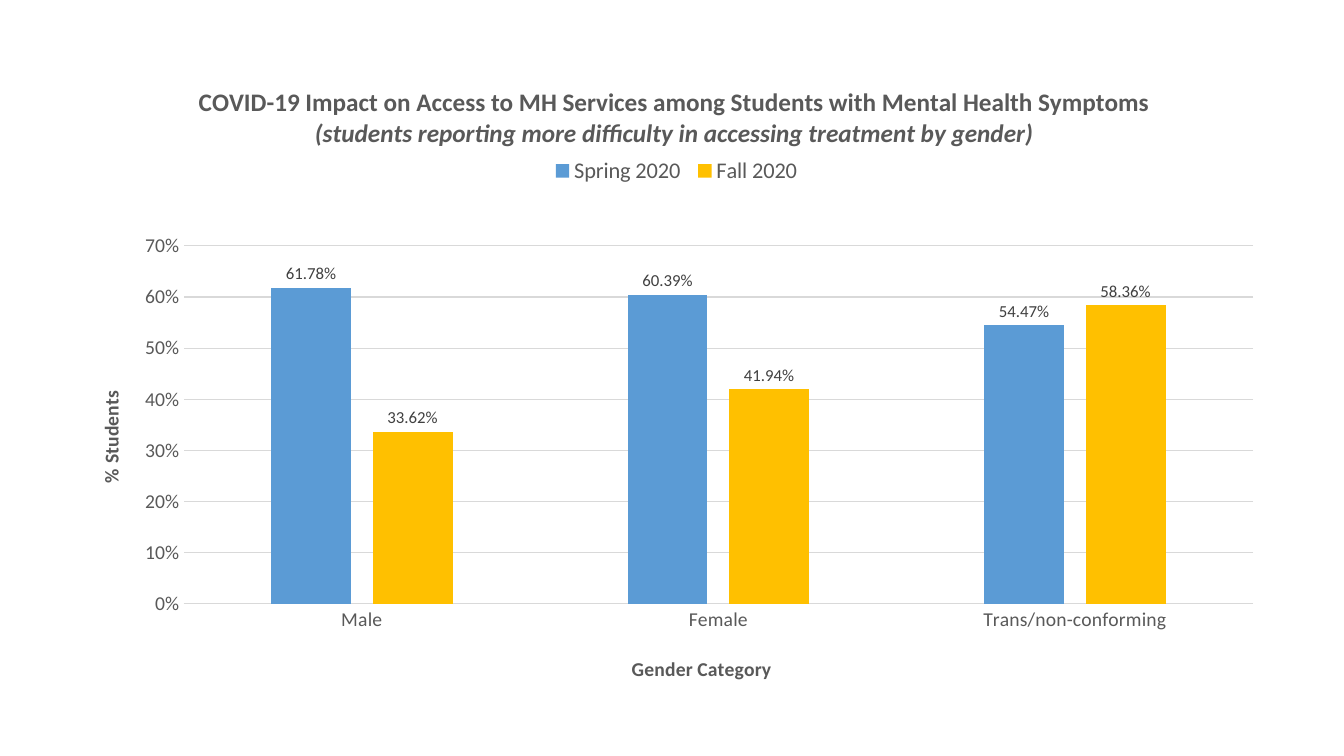
from lxml import etree
from pptx import Presentation
from pptx.chart.data import CategoryChartData
from pptx.dml.color import RGBColor
from pptx.enum.chart import XL_CHART_TYPE, XL_LABEL_POSITION, XL_LEGEND_POSITION, XL_TICK_MARK
from pptx.oxml.ns import qn
from pptx.util import Inches, Pt

COLUMNS = XL_CHART_TYPE.COLUMN_CLUSTERED
OUTSIDE = XL_LABEL_POSITION.OUTSIDE_END
TOP = XL_LEGEND_POSITION.TOP
NO_TICK = XL_TICK_MARK.NONE

GRAY = RGBColor(0x59, 0x59, 0x59)
DARK = RGBColor(0x40, 0x40, 0x40)
LIGHT = RGBColor(0xD9, 0xD9, 0xD9)
BLUE = RGBColor(0x5B, 0x9B, 0xD5)
GOLD = RGBColor(0xFF, 0xC0, 0x00)

TITLE = [
    ("COVID-19 Impact on Access to MH Services among Students with Mental Health Symptoms", False),
    ("(students reporting more difficulty in accessing treatment by gender)", True),
]
GENDERS = ["Male", "Female", "Trans/non-conforming"]
SERIES = [
    ("Spring 2020", [0.6178, 0.6039, 0.5447], BLUE),
    ("Fall 2020", [0.3362, 0.4194, 0.5836], GOLD),
]
X_TITLE, Y_TITLE = "Gender Category", "% Students"

CHART = (0.66, 0.58, 12.01, 6.35)
PLOT_AT = (1.82, 2.44, 10.61, 3.55)
TITLE_AT = (1.94, 0.82)
LEGEND_AT = (5.41, 1.56, 2.6, 0.27)
X_TITLE_AT = (6.23, 6.47)
Y_TITLE_AT = (0.93, 3.84)


def set_font(font, size, color=GRAY, **formats):
    font.name, font.size = "Calibri", Pt(size)
    font.color.rgb = color
    for name, value in formats.items():
        setattr(font, name, value)


def set_text(tf, lines, size):
    for i, (text, italic) in enumerate(lines):
        p = tf.paragraphs[0] if i == 0 else tf.add_paragraph()
        r = p.add_run()
        r.text = text
        set_font(r.font, size, bold=True, italic=italic)


def place(el, box, inner=False):
    for old in el.findall(qn("c:layout")):
        el.remove(old)
    layout = etree.Element(qn("c:layout"))
    manual = etree.SubElement(layout, qn("c:manualLayout"))
    left, top, width, height = CHART
    fractions = [(box[0] - left) / width, (box[1] - top) / height]
    fractions += [n / total for n, total in zip(box[2:], (width, height))]
    settings = [("layoutTarget", "inner")] if inner else []
    settings += [("xMode", "edge"), ("yMode", "edge")]
    settings += [(tag, f"{n:.4f}") for tag, n in zip("xywh", fractions)]
    for tag, value in settings:
        etree.SubElement(manual, qn(f"c:{tag}")).set("val", value)
    overlay = el.find(qn("c:overlay"))
    if overlay is None:
        el.insert(0, layout)
    else:
        overlay.addprevious(layout)


prs = Presentation()
prs.slide_width, prs.slide_height = Inches(13.33), Inches(7.5)
s = prs.slides.add_slide(prs.slide_layouts[6])

data = CategoryChartData(number_format="0.00%")
data.categories = GENDERS
for name, values, _ in SERIES:
    data.add_series(name, values)
chart = s.shapes.add_chart(COLUMNS, *map(Inches, CHART), data).chart
set_font(chart.font, 10, RGBColor(0, 0, 0))

chart.has_title = True
set_text(chart.chart_title.text_frame, TITLE, 18)
place(chart.chart_title._element, TITLE_AT)

chart.has_legend = True
chart.legend.position = TOP
chart.legend.include_in_layout = False
set_font(chart.legend.font, 16)
place(chart.legend._element, LEGEND_AT)

x_axis, y_axis = chart.category_axis, chart.value_axis
for axis, text, box in ((x_axis, X_TITLE, X_TITLE_AT), (y_axis, Y_TITLE, Y_TITLE_AT)):
    axis.major_tick_mark = axis.minor_tick_mark = NO_TICK
    set_font(axis.tick_labels.font, 14)
    set_text(axis.axis_title.text_frame, [(text, False)], 14)
    place(axis.axis_title._element, box)
body = y_axis.axis_title.text_frame._txBody.find(qn("a:bodyPr"))
body.set("rot", "-5400000")
body.set("vert", "horz")

y_axis.minimum_scale, y_axis.maximum_scale, y_axis.major_unit = 0, 0.7, 0.1
y_axis.tick_labels.number_format = "0%"
y_axis.tick_labels.number_format_is_linked = False
y_axis.format.line.fill.background()
for line in (x_axis.format.line, y_axis.major_gridlines.format.line):
    line.color.rgb = LIGHT
    line.width = Pt(0.75)

plot = chart.plots[0]
plot.gap_width, plot.overlap, plot.vary_by_categories = 219, -27, False
for series, (_, _, color) in zip(plot.series, SERIES):
    series.format.fill.solid()
    series.format.fill.fore_color.rgb = color
    labels = series.data_labels
    labels.show_value = True
    labels.position = OUTSIDE
    labels.number_format = "0.00%"
    labels.number_format_is_linked = False
    set_font(labels.font, 12, DARK)
place(chart._chartSpace.chart.plotArea, PLOT_AT, inner=True)

prs.save("out.pptx")
